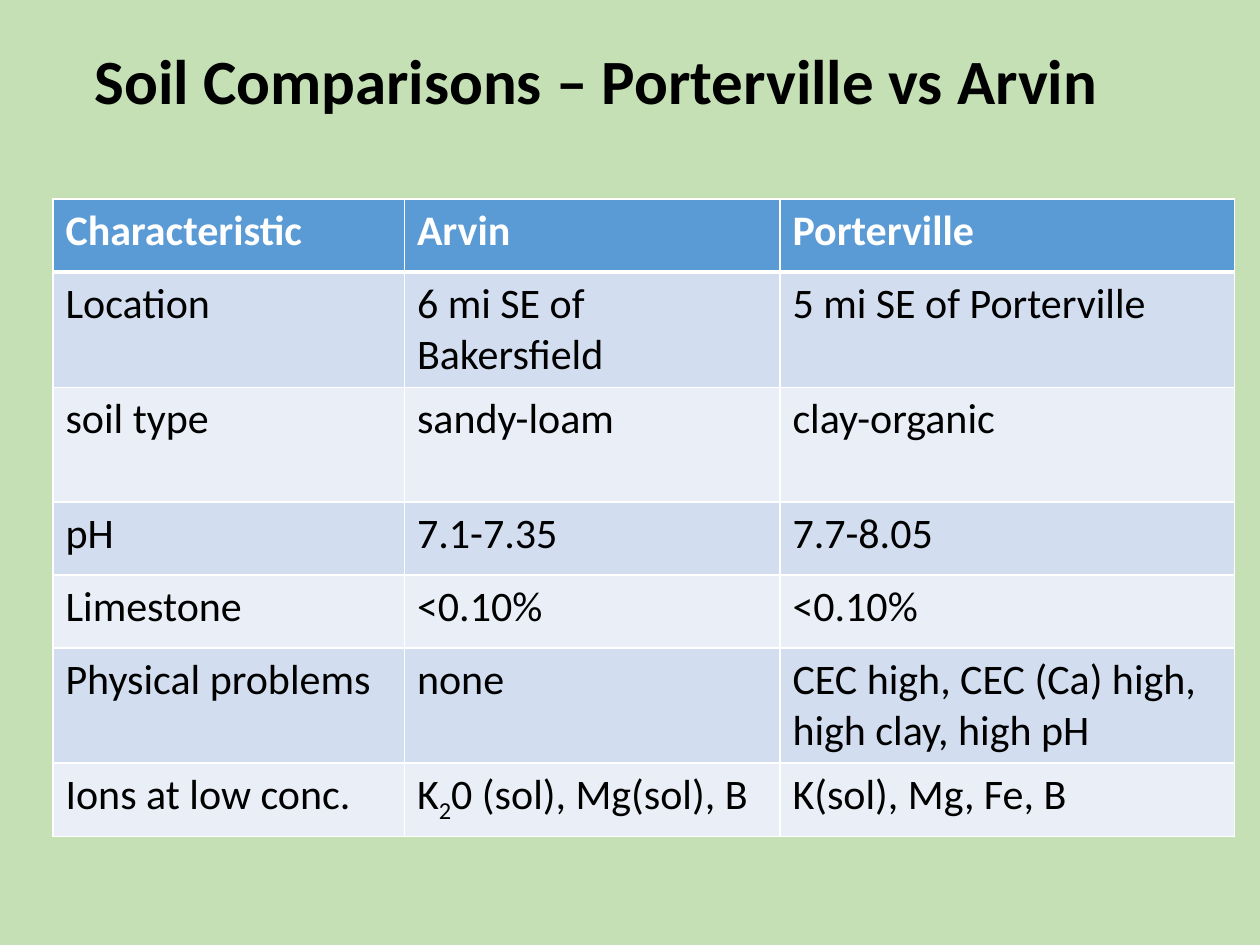
from pptx import Presentation
from pptx.dml.color import RGBColor
from pptx.enum.text import MSO_ANCHOR, PP_ALIGN
from pptx.oxml.ns import qn
from pptx.util import Inches, Pt
from lxml import etree

LEFT = PP_ALIGN.LEFT
MIDDLE = MSO_ANCHOR.MIDDLE
FONT = "Calibri"
COLORS = {
    "background": "C5E0B4",
    "header": "5B9BD5",
    "odd": "D2DEEF",
    "even": "EAEFF7",
    "white": "FFFFFF",
    "black": "000000",
}
COL_WIDTHS = [2.79, 2.98, 3.61]
ONE_LINE, TWO_LINES = 0.58, 0.91
ROWS = [
    (ONE_LINE, ["Characteristic", "Arvin", "Porterville"]),
    (TWO_LINES, ["Location", "6 mi SE of Bakersfield", "5 mi SE of Porterville"]),
    (TWO_LINES, ["soil type", "sandy-loam", "clay-organic"]),
    (ONE_LINE, ["pH", "7.1-7.35", "7.7-8.05"]),
    (ONE_LINE, ["Limestone", "<0.10%", "<0.10%"]),
    (TWO_LINES, ["Physical problems", "none", "CEC high, CEC (Ca) high, high clay, high pH"]),
    (ONE_LINE, ["Ions at low conc.", ["K", "2", "0 (sol), Mg(sol), B"], "K(sol), Mg, Fe, B"]),
]


def rgb(name):
    return RGBColor.from_string(COLORS[name])


def style_paragraph(p, size, color, bold):
    p.font.name = FONT
    p.font.size = Pt(size)
    p.font.bold = bold
    p.font.color.rgb = rgb(color)


def add_title(s, text):
    sp = s.shapes.title
    sp.left, sp.top, sp.width, sp.height = map(Inches, (0.65, 0.17, 8.62, 1))
    tf = sp.text_frame
    tf.vertical_anchor = MIDDLE
    p = tf.paragraphs[0]
    p.text = text
    p.alignment = LEFT
    p.line_spacing = 0.9
    style_paragraph(p, 36, "black", True)


def set_borders(cell, top, bottom):
    tcPr = cell._tc.get_or_add_tcPr()
    for tag, width in (("a:lnL", 1), ("a:lnR", 1), ("a:lnT", top), ("a:lnB", bottom)):
        ln = etree.SubElement(tcPr, qn(tag), w=str(Pt(width)))
        fill = etree.SubElement(ln, qn("a:solidFill"))
        etree.SubElement(fill, qn("a:srgbClr"), val=COLORS["white"])


def fill_cell(cell, content, row):
    header = row == 0
    set_borders(cell, 3 if row == 1 else 1, 3 if header else 1)
    cell.fill.solid()
    cell.fill.fore_color.rgb = rgb("header" if header else "odd" if row % 2 else "even")
    p = cell.text_frame.paragraphs[0]
    parts = [content] if isinstance(content, str) else content
    for i, part in enumerate(parts):
        r = p.add_run()
        r.text = part
        if i % 2:
            r.font._element.set("baseline", "-25000")
    style_paragraph(p, 24, "white" if header else "black", header)


def add_soil_table(s):
    height = sum(h for h, _ in ROWS)
    table = s.shapes.add_table(
        len(ROWS), len(COL_WIDTHS), Inches(0.42), Inches(1.58),
        Inches(sum(COL_WIDTHS)), Inches(height),
    ).table
    for column, width in zip(table.columns, COL_WIDTHS):
        column.width = Inches(width)
    for i, (row_height, contents) in enumerate(ROWS):
        table.rows[i].height = Inches(row_height)
        for j, content in enumerate(contents):
            fill_cell(table.cell(i, j), content, i)


def main():
    prs = Presentation()
    prs.slide_width, prs.slide_height = Inches(10), Inches(7.5)
    s = prs.slides.add_slide(prs.slide_layouts[5])
    s.background.fill.solid()
    s.background.fill.fore_color.rgb = rgb("background")
    add_title(s, "Soil Comparisons – Porterville vs Arvin")
    add_soil_table(s)
    prs.save("out.pptx")


if __name__ == "__main__":
    main()
